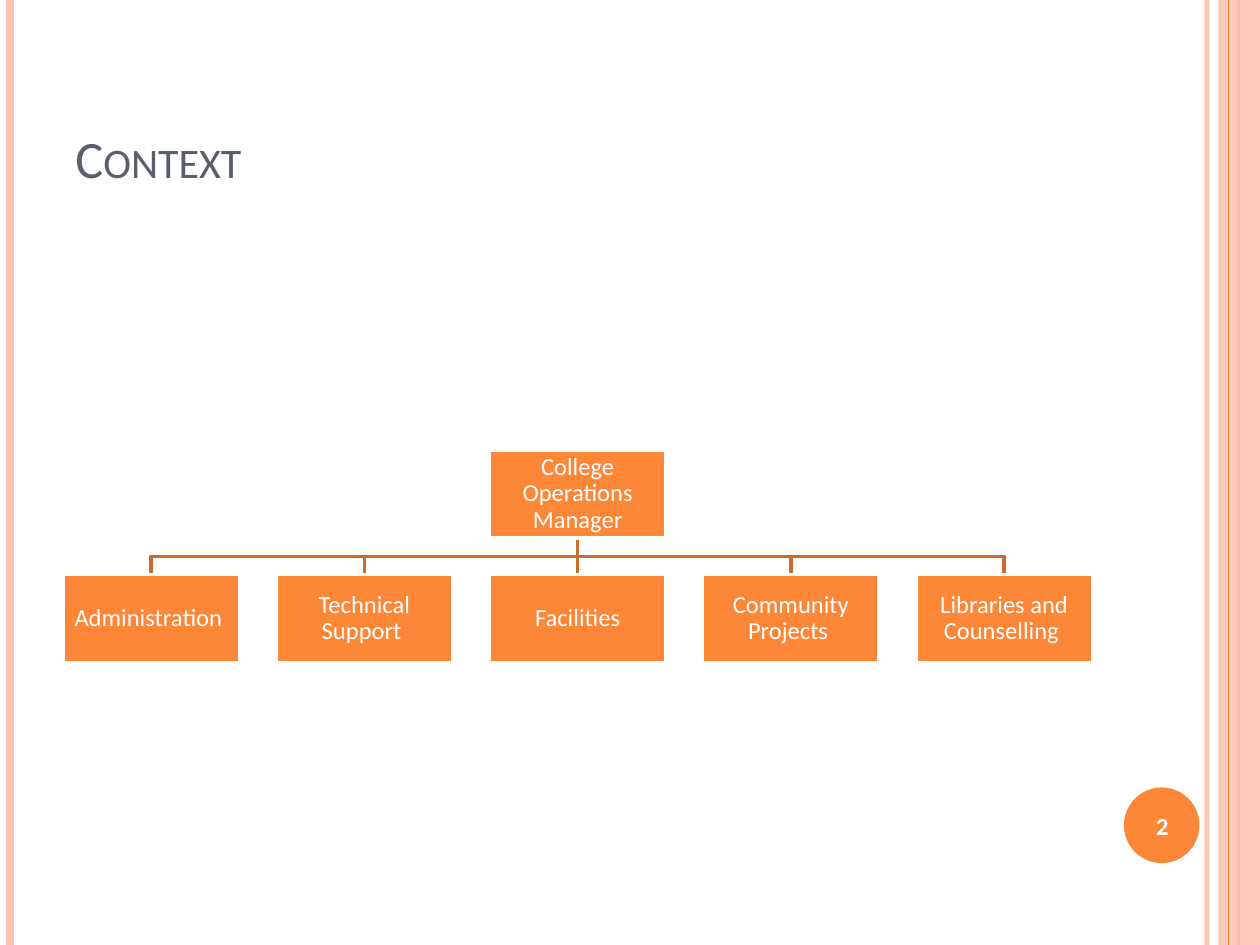
from typing import NamedTuple

from lxml.etree import SubElement
from pptx import Presentation
from pptx.dml.color import RGBColor
from pptx.enum.shapes import MSO_CONNECTOR as Link, MSO_SHAPE as Preset
from pptx.enum.text import MSO_ANCHOR as Anchor, PP_ALIGN as Align
from pptx.oxml.ns import qn
from pptx.util import Inches, Pt

COLOURS = {
    "orange": "FE8637",
    "peach": "FEC3AE",
    "rust": "CB6B2C",
    "slate": "575F6D",
    "white": "FFFFFF",
}
FONT = "Calibri"
PAGE_WIDTH, PAGE_HEIGHT = 10, 7.5
CHART_LEFT, CHART_WIDTH = 0.5, 8.17
BOX_WIDTH, BOX_HEIGHT = 1.4, 0.7
MANAGER_TOP, TEAM_TOP = 3.57, 4.56
TEAMS = [
    "Administration ",
    "Technical Support ",
    "Facilities",
    "Community Projects ",
    "Libraries and Counselling ",
]


class Area(NamedTuple):
    left: float
    top: float
    width: float
    height: float


class Stripe(NamedTuple):
    x: float
    colour: str
    weight: float
    opacity: int = 100


class TextStyle(NamedTuple):
    size: float
    colour: str = "white"
    bold: bool = False
    small_caps: bool = False
    align: Align = Align.CENTER
    anchor: Anchor = Anchor.MIDDLE
    spacing: float = 1.0
    inset: float | None = None


TITLE_STYLE = TextStyle(30, "slate", small_caps=True, align=Align.LEFT, anchor=Anchor.BOTTOM)
NUMBER_STYLE = TextStyle(14, bold=True)
BOX_STYLE = TextStyle(14, spacing=0.9, inset=0.01)
LEFT_STRIPES = [Stripe(9.58, "peach", 3, 93), Stripe(0.08, "peach", 4.5), Stripe(9.83, "orange", 1.5)]
EDGE_STRIPE = Stripe(9.75, "orange", 0.75)


def paint(fill, colour: str, opacity: int = 100) -> None:
    """Give a fill a solid colour with an optional opacity in percent."""
    fill.solid()
    fill.fore_color.rgb = RGBColor.from_string(COLOURS[colour])
    if opacity < 100:
        tint = fill._xPr.find(f".//{qn('a:srgbClr')}")
        SubElement(tint, qn("a:alpha")).set("val", str(opacity * 1000))


def draw_line(page, start: tuple, end: tuple, colour: str, weight: float, opacity: int = 100):
    """Draw a straight connector without a shadow."""
    line = page.shapes.add_connector(Link.STRAIGHT, *map(Inches, start + end))
    line.line.width = Pt(weight)
    paint(line.line.fill, colour, opacity)
    SubElement(line.element.spPr, qn("a:effectLst"))
    return line


def draw_stripe(page, stripe: Stripe) -> None:
    """Draw a vertical stripe over the full page height."""
    draw_line(page, (stripe.x, 0), (stripe.x, PAGE_HEIGHT), stripe.colour, stripe.weight, stripe.opacity)


def draw_shape(page, preset: Preset, area: Area, colour: str, opacity: int = 100):
    """Draw a filled preset shape without an outline."""
    shape = page.shapes.add_shape(preset, *map(Inches, area))
    shape.shadow.inherit = False
    paint(shape.fill, colour, opacity)
    shape.line.fill.background()
    return shape


def write_text(shape, text: str, style: TextStyle) -> None:
    """Write one styled run into a shape or text box."""
    frame = shape.text_frame
    frame.word_wrap = True
    frame.vertical_anchor = style.anchor
    if style.inset is not None:
        frame.margin_left = frame.margin_right = Inches(style.inset)
        frame.margin_top = frame.margin_bottom = Inches(style.inset)
    para = frame.paragraphs[0]
    para.alignment = style.align
    para.line_spacing = style.spacing
    span = para.add_run()
    span.text = text
    span.font.name = FONT
    span.font.size = Pt(style.size)
    span.font.bold = style.bold
    span.font.color.rgb = RGBColor.from_string(COLOURS[style.colour])
    if style.small_caps:
        span.font._element.set("cap", "small")


def add_label(page, area: Area, text: str, style: TextStyle) -> None:
    """Add a text box with one line of text."""
    write_text(page.shapes.add_textbox(*map(Inches, area)), text, style)


def draw_box(page, left: float, top: float, text: str):
    """Draw one box of the organisation chart."""
    box = draw_shape(page, Preset.RECTANGLE, Area(left, top, BOX_WIDTH, BOX_HEIGHT), "orange")
    box.line.width = Pt(2)
    paint(box.line.fill, "white")
    write_text(box, text, BOX_STYLE)
    return box


def draw_branch(page, start: tuple, end: tuple):
    """Draw an elbow line that turns halfway down."""
    middle = (start[1] + end[1]) / 2
    corners = [(start[0], middle), (end[0], middle), end]
    builder = page.shapes.build_freeform(*map(Inches, start))
    builder.add_line_segments([tuple(map(Inches, corner)) for corner in corners], close=False)
    branch = builder.convert_to_shape()
    branch.shadow.inherit = False
    branch.fill.background()
    branch.line.width = Pt(2)
    paint(branch.line.fill, "rust")
    return branch


def draw_organisation(page) -> None:
    """Draw the manager, the teams and the lines between them."""
    pitch = (CHART_WIDTH - BOX_WIDTH) / (len(TEAMS) - 1)
    manager_left = CHART_LEFT + (CHART_WIDTH - BOX_WIDTH) / 2
    manager = draw_box(page, manager_left, MANAGER_TOP, "College Operations Manager")
    start = (manager_left + BOX_WIDTH / 2, MANAGER_TOP + BOX_HEIGHT)
    for index, team in enumerate(TEAMS):
        left = CHART_LEFT + index * pitch
        box = draw_box(page, left, TEAM_TOP, team)
        end = (left + BOX_WIDTH / 2, TEAM_TOP)
        if index == len(TEAMS) // 2:
            link = draw_line(page, start, end, "rust", 2)
            link.begin_connect(manager, 2)
            link.end_connect(box, 0)
        else:
            link = draw_branch(page, start, end)
        manager.element.addprevious(link.element)


def main() -> None:
    """Build the slide and save it."""
    deck = Presentation()
    deck.slide_width, deck.slide_height = Inches(PAGE_WIDTH), Inches(PAGE_HEIGHT)
    page = deck.slides.add_slide(deck.slide_layouts[6])
    for stripe in LEFT_STRIPES:
        draw_stripe(page, stripe)
    draw_shape(page, Preset.RECTANGLE, Area(9.67, 0, 0.33, PAGE_HEIGHT), "peach", 87)
    draw_stripe(page, EDGE_STRIPE)
    draw_shape(page, Preset.OVAL, Area(8.92, 6.25, 0.6, 0.6), "orange")
    add_label(page, Area(0.5, 0.3, 8.17, 1.25), "Context", TITLE_STYLE)
    add_label(page, Area(8.89, 6.27, 0.67, 0.57), "2", NUMBER_STYLE)
    draw_organisation(page)
    deck.save("out.pptx")


if __name__ == "__main__":
    main()
